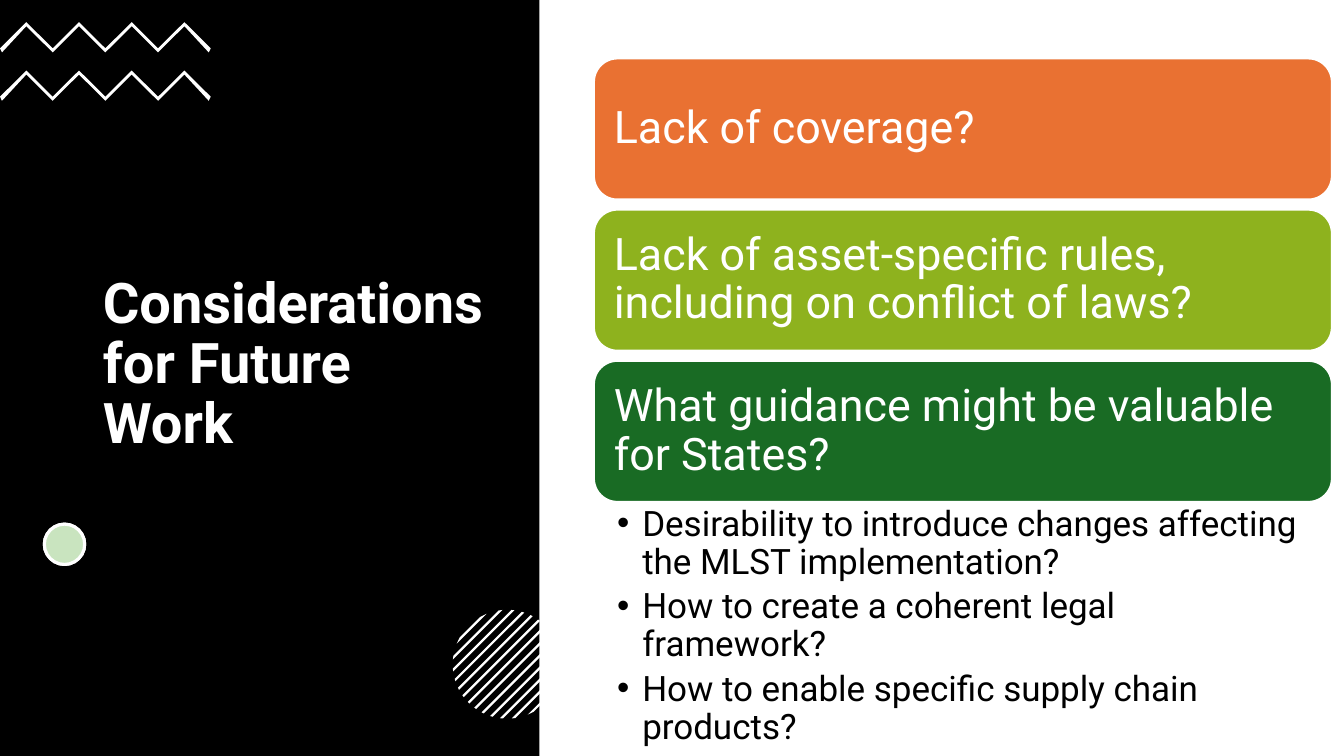
import math

from pptx import Presentation
from pptx import util as u
from pptx.dml import color
from pptx.enum import shapes, text
from pptx.oxml import xmlchemy
from lxml import etree
from pptx.oxml import ns

PX = 9144  # EMU per px, 100 px to the inch
FONT = "Roboto"
WHITE, BLACK = "FFFFFF", "000000"

TITLE = "Considerations for Future Work"
CARDS = [
    ("Lack of coverage?", "E97132"),
    ("Lack of asset-specific rules, including on conflict of laws?", "8EB21E"),
    ("What guidance might be valuable for States?", "196B24"),
]
QUESTIONS = [
    "Desirability to introduce changes affecting the MLST implementation?",
    "How to create a coherent legal framework?",
    "How to enable specific supply chain products?",
]


def px(length):
    return u.Emu(round(length * PX))


def rgb(value):
    return color.RGBColor.from_string(value)


def apply(target, values):
    for name, value in values.items():
        setattr(target, name, value)


def place(part, box):
    apply(part, dict(zip(("left", "top", "width", "height"), map(px, box))))


def paint(part, fill, line=None, width=0):
    part.shadow.inherit = False
    part.fill.solid()
    part.fill.fore_color.rgb = rgb(fill)
    if line:
        part.line.color.rgb = rgb(line)
        part.line.width = u.Pt(width)
    else:
        part.line.fill.background()


def write(part, lines, size, hue, anchor, insets, after=0, bold=False):
    frame = part.text_frame
    sides = ("margin_left", "margin_top", "margin_right", "margin_bottom")
    apply(frame, dict(zip(sides, map(px, insets))))
    apply(frame, {"word_wrap": True, "vertical_anchor": anchor,
                  "auto_size": text.MSO_AUTO_SIZE.NONE})
    frame.text = "\n".join(lines)
    for paragraph in frame.paragraphs:
        apply(paragraph, {"alignment": text.PP_ALIGN.LEFT, "line_spacing": 0.9,
                          "space_before": u.Pt(0), "space_after": u.Pt(after)})
        font = paragraph.runs[0].font
        apply(font, {"name": FONT, "size": u.Pt(size), "bold": bold})
        font.color.rgb = rgb(hue)


def outline(slide, points):
    points = [(px(x), px(y)) for x, y in points]
    builder = slide.shapes.build_freeform(*points[0])
    builder.add_line_segments(points[1:], close=True)
    paint(builder.convert_to_shape(), WHITE)


def zigzag(slide, box, peaks=4, thickness=4):
    left, top, width, height = box
    steps = 2 * peaks
    upper, lower = [], []
    for i in range(steps + 1):
        x = left + width * i / steps
        y = top if i % 2 else top + height - thickness
        upper.append((x, y))
        lower.append((min(max(x, left + 2), left + width - 2), y + thickness))
    outline(slide, upper + lower[::-1])


def striped_circle(slide, box, stripes=13, gap=6, half_width=0.8):
    left, top, size, _ = box
    radius = size / 2

    def chord(offset):
        reach = math.sqrt(radius ** 2 / 2 - offset ** 2)
        x, y = left + radius + offset, top + radius + offset
        return [(x + reach, y - reach), (x - reach, y + reach)]

    for i in range(stripes):
        middle = (i - stripes // 2) * gap
        outline(slide, chord(middle - half_width) + chord(middle + half_width)[::-1])


def dot(slide, box):
    for fill, alpha in ((WHITE, None), ("4EA72E", 30)):
        disc = slide.shapes.add_shape(shapes.MSO_SHAPE.OVAL, *map(px, box))
        paint(disc, fill, WHITE, 2.25)
        if alpha:
            tint = disc.fill._xPr.find(".//" + ns.qn("a:srgbClr"))
            etree.SubElement(tint, ns.qn("a:alpha"), val=str(alpha * 1000))


def title_panel(slide, box):
    left, top, width, height = box
    panel = slide.shapes.add_shape(shapes.MSO_SHAPE.RECTANGLE, *map(px, box))
    paint(panel, BLACK)
    slide.shapes._spTree.insert(2, panel._element)  # behind the title

    title = slide.shapes.title
    place(title, (left + 92, top + 131, 405, 463))
    write(title, [TITLE], 40, WHITE, text.MSO_ANCHOR.MIDDLE, (10, 5, 10, 5), bold=True)

    # Ornaments
    for row in range(2):
        zigzag(slide, (left, top + 22 + 48 * row, 209, 30))
    dot(slide, (left + 44, top + 520, 40, 40))
    striped_circle(slide, (left + width - 86, top + 605, 108, 108))


def question_list(slide, box):
    left, top, width, height = box
    card_height, pitch = 140, 150

    # Coloured cards
    for row, (wording, fill) in enumerate(CARDS):
        card = slide.shapes.add_shape(
            shapes.MSO_SHAPE.ROUNDED_RECTANGLE,
            *map(px, (left, top + row * pitch, width, card_height)))
        paint(card, fill, WHITE, 1.5)
        write(card, [wording], 32, WHITE, text.MSO_ANCHOR.MIDDLE, (13, 13, 13, 13))

    # Bullets below the last card
    used = pitch * (len(CARDS) - 1) + card_height
    bullets = slide.placeholders[1]
    place(bullets, (left, top + used, width, height - used))
    write(bullets, QUESTIONS, 25, BLACK, text.MSO_ANCHOR.TOP, (23, 4, 25, 4), after=5)
    for paragraph in bullets.text_frame.paragraphs:
        properties = paragraph._p.get_or_add_pPr()
        properties.set("marL", str(px(25)))
        properties.set("indent", str(px(-25)))
        etree.SubElement(properties, ns.qn("a:buChar"), char="•")


def main():
    deck = Presentation()
    apply(deck, {"slide_width": px(1333), "slide_height": px(750)})
    slide = deck.slides.add_slide(deck.slide_layouts[1])
    title_panel(slide, (0, 0, 535, 750))
    question_list(slide, (589, 58, 732, 657))
    deck.save("out.pptx")


if __name__ == "__main__":
    main()
